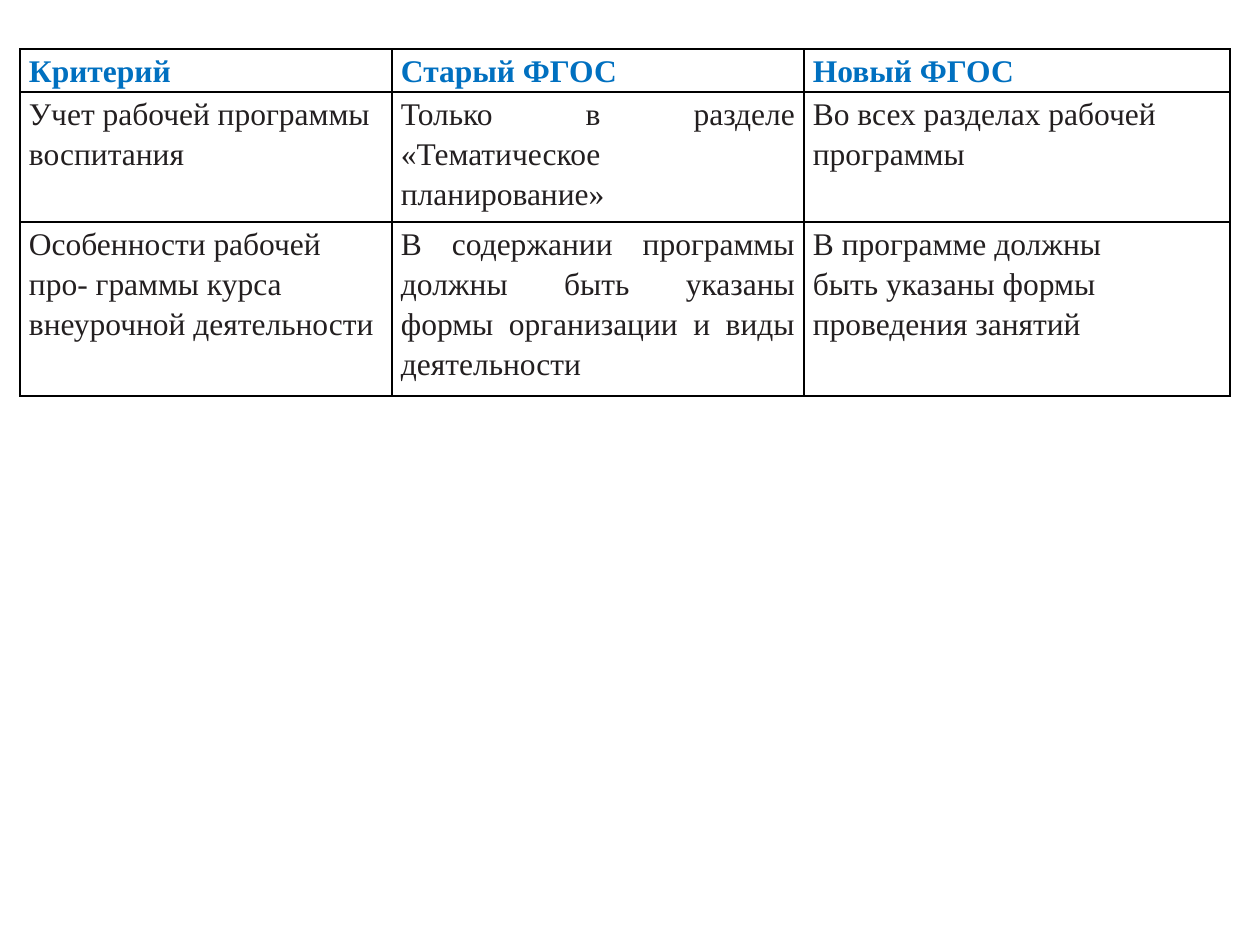
"""Build a slide with a table comparing the old and new standards."""
from lxml.etree import SubElement
from pptx import Presentation
from pptx.dml.color import RGBColor
from pptx.enum.text import PP_ALIGN
from pptx.oxml.ns import qn
from pptx.util import Pt

PX = 914400 // 126
BLUE = RGBColor(0x00, 0x70, 0xC0)
DARK = RGBColor(0x23, 0x1F, 0x20)
BLACK = RGBColor(0x00, 0x00, 0x00)
LEFT, TOP = 20, 49
WIDTHS = [372, 412, 426]
HEIGHTS = [43, 130, 174]
MARGIN, WIDE_MARGIN = 9, 90
ROWS = [
    ["Критерий", "Старый ФГОС", "Новый ФГОС"],
    ["Учет рабочей программы воспитания",
     "Только в разделе «Тематическое планирование»",
     "Во всех разделах рабочей программы"],
    ["Особенности рабочей про- граммы курса внеурочной деятельности",
     "В содержании программы должны быть указаны формы организации и виды деятельности",
     "В программе должны быть указаны формы проведения занятий"],
]


def add_borders(cell):
    tcPr = cell._tc.get_or_add_tcPr()
    for i, side in enumerate(("lnL", "lnR", "lnT", "lnB")):
        ln = SubElement(tcPr, qn(f"a:{side}"), w=str(Pt(1)))
        fill = SubElement(ln, qn("a:solidFill"))
        SubElement(fill, qn("a:srgbClr"), val=str(BLACK))
        tcPr.insert(i, ln)


def fill_cell(cell, text, row, col):
    header = row == 0
    cell.fill.background()
    add_borders(cell)
    cell.margin_top = cell.margin_bottom = 0
    cell.margin_left = MARGIN * PX
    cell.margin_right = (WIDE_MARGIN if (row, col) == (2, 2) else MARGIN) * PX
    p = cell.text_frame.paragraphs[0]
    p.text = text
    p.line_spacing = 1.15
    if header:
        p.space_after = Pt(4.6)
    else:
        p.space_before = Pt(6)
    p.alignment = PP_ALIGN.JUSTIFY if col == 1 and not header else PP_ALIGN.LEFT
    p.font.name = "Times New Roman"
    p.font.size = Pt(18)
    p.font.bold = header
    p.font.color.rgb = BLUE if header else DARK


def main():
    prs = Presentation()
    prs.slide_width, prs.slide_height = 1260 * PX, 945 * PX
    s = prs.slides.add_slide(prs.slide_layouts[6])
    table = s.shapes.add_table(
        len(HEIGHTS), len(WIDTHS), LEFT * PX, TOP * PX,
        sum(WIDTHS) * PX, sum(HEIGHTS) * PX).table
    table.first_row = table.horz_banding = False
    for column, width in zip(table.columns, WIDTHS):
        column.width = width * PX
    for i, (height, texts) in enumerate(zip(HEIGHTS, ROWS)):
        table.rows[i].height = height * PX
        for j, text in enumerate(texts):
            fill_cell(table.cell(i, j), text, i, j)
    prs.save("out.pptx")


if __name__ == "__main__":
    main()
